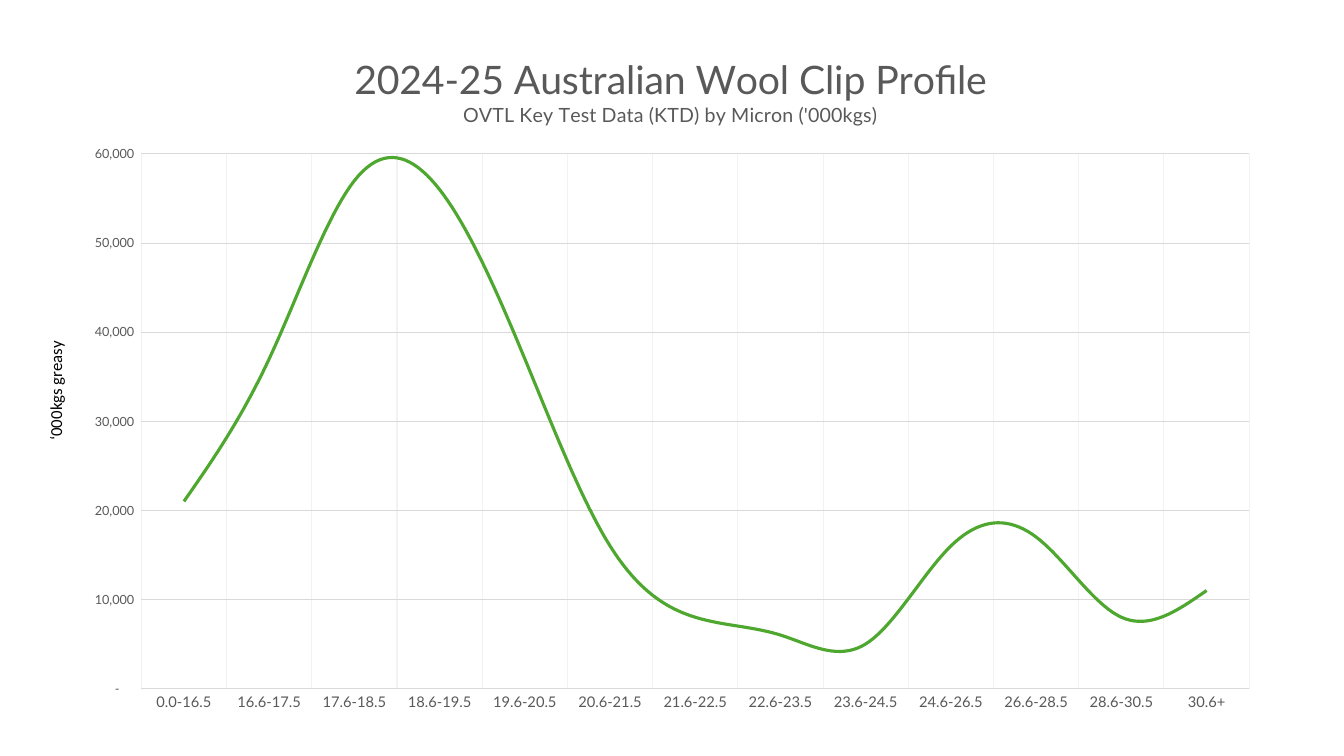
from lxml import etree
from pptx import Presentation
from pptx import util as u
from pptx.chart.data import CategoryChartData
from pptx.dml.color import RGBColor
from pptx.enum import chart as ch, text
from pptx.oxml import ns

CLIP = [
    ("0.0-16.5", 21000), ("16.6-17.5", 37000), ("17.6-18.5", 57000),
    ("18.6-19.5", 56000), ("19.6-20.5", 37000), ("20.6-21.5", 16000),
    ("21.6-22.5", 8000), ("22.6-23.5", 6000), ("23.6-24.5", 5000),
    ("24.6-26.5", 16000), ("26.6-28.5", 17000), ("28.6-30.5", 8000),
    ("30.6+", 11000),
]
TITLE = [
    ("2024-25 Australian Wool Clip Profile", "title"),
    ("OVTL Key Test Data (KTD) by Micron ('000kgs)", "sub"),
]
UNIT = "‘000kgs greasy"
FORMAT = '_-* #,##0_-;\\-* #,##0_-;_-* "-"??_-;_-@_-'
THEME = {
    "font": "Lato", "side": "Calibri",
    "ink": "595959", "black": "000000", "wool": "4EA72E",
    "grid": "D9D9D9", "faint": "F2F2F2",
    "title": 28, "sub": 14, "unit": 12, "cat": 10.5, "val": 9, "base": 10,
}
WIDE, HIGH = 13.33, 7.5
FRAME = (0.66, 0.31, 11.97, 6.88)
LABEL = (-0.17, 3.6, 1.44, 0.3)
PLOT = {"x": 6.2, "y": 17.7, "w": 91.8, "h": 77.1}
HEAD = {"x": 23.6, "y": 2.8}


def style(font, size, color, face=THEME["font"]):
    font.size = u.Pt(THEME[size])
    font.name = face
    font.bold = False
    font.color.rgb = RGBColor.from_string(THEME[color])


def stroke(line, color, width):
    line.color.rgb = RGBColor.from_string(THEME[color])
    line.width = u.Pt(width)


def layout(owner, shares, inner=False):
    for old in owner.findall(ns.qn("c:layout")):
        owner.remove(old)
    node = etree.Element(ns.qn("c:layout"))
    manual = etree.SubElement(node, ns.qn("c:manualLayout"))
    rows = [("layoutTarget", "inner")] if inner else []
    rows += [(key + "Mode", "edge") for key in "xy"]
    rows += [(key, str(part / 100)) for key, part in shares.items()]
    for tag, val in rows:
        etree.SubElement(manual, ns.qn("c:" + tag)).set("val", val)
    first = owner.find(ns.qn("c:tx"))
    if first is None:
        owner.insert(0, node)
    else:
        first.addnext(node)


def draw(slide):
    data = CategoryChartData()
    data.categories = [band for band, mass in CLIP]
    data.add_series("Series 1", [mass for band, mass in CLIP])
    spot = [u.Inches(n) for n in FRAME]
    chart = slide.shapes.add_chart(ch.XL_CHART_TYPE.LINE, *spot, data).chart
    chart.has_legend = False
    style(chart.font, "base", "black")

    frame = chart.chart_title.text_frame
    for i, (words, size) in enumerate(TITLE):
        para = frame.add_paragraph() if i else frame.paragraphs[0]
        para.alignment = text.PP_ALIGN.CENTER
        run = para.add_run()
        run.text = words
        style(run.font, size, "ink")
    chart.chart_title.include_in_layout = False
    area = chart.plots[0]
    area.vary_by_categories = False
    curve = area.series[0]
    curve.smooth = True
    curve.marker.style = ch.XL_MARKER_STYLE.NONE
    stroke(curve.format.line, "wool", 2.25)

    sides = [(chart.category_axis, "cat", "faint"),
             (chart.value_axis, "val", "grid")]
    for axis, size, color in sides:
        axis.major_tick_mark = axis.minor_tick_mark = ch.XL_TICK_MARK.NONE
        axis.has_major_gridlines = True
        stroke(axis.major_gridlines.format.line, color, 0.75)
        style(axis.tick_labels.font, size, "ink")
    stroke(chart.category_axis.format.line, "grid", 0.75)
    scale = chart.value_axis
    scale.format.line.fill.background()
    scale.minimum_scale, scale.maximum_scale, scale.major_unit = 0, 60000, 10000
    scale.tick_labels.number_format = FORMAT
    scale.tick_labels.number_format_is_linked = False

    root = chart.element
    layout(root.find(".//" + ns.qn("c:plotArea")), PLOT, True)
    layout(root.find("./" + ns.qn("c:chart") + "/" + ns.qn("c:title")), HEAD)


def label(slide):
    box = slide.shapes.add_textbox(*[u.Inches(n) for n in LABEL])
    box.rotation = 270
    frame = box.text_frame
    frame.word_wrap = True
    frame.auto_size = text.MSO_AUTO_SIZE.SHAPE_TO_FIT_TEXT
    run = frame.paragraphs[0].add_run()
    run.text = UNIT
    style(run.font, "unit", "black", THEME["side"])


def main():
    deck = Presentation()
    deck.slide_width, deck.slide_height = u.Inches(WIDE), u.Inches(HIGH)
    slide = deck.slides.add_slide(deck.slide_layouts[6])
    draw(slide)
    label(slide)
    deck.save("out.pptx")


if __name__ == "__main__":
    main()
